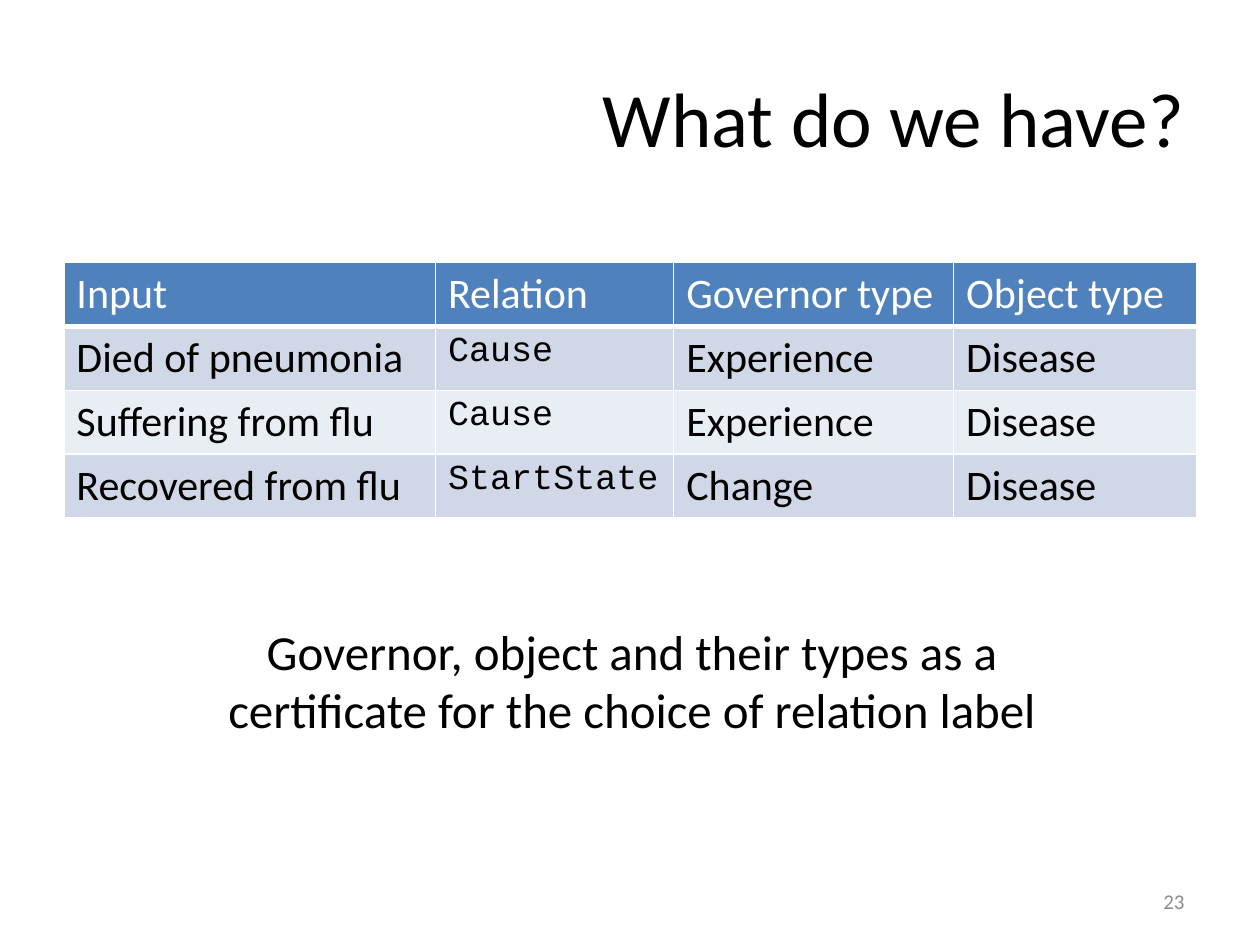
"""Build a slide with a table of relations and the types of their arguments."""
from dataclasses import dataclass

import lxml.etree
import pptx
import pptx.dml.color
import pptx.enum.text
import pptx.oxml.ns
import pptx.util

Pt = pptx.util.Pt
ALIGN = pptx.enum.text.PP_ALIGN
ANCHOR = pptx.enum.text.MSO_ANCHOR


@dataclass(frozen=True)
class Theme:
    body_font: str = "Calibri"
    code_font: str = "Courier New"
    text: str = "000000"
    light: str = "FFFFFF"
    muted: str = "8C8C8C"
    header_fill: str = "4F81BD"
    band_fills: tuple = ("D0D8E8", "E9EDF4")
    title_size: int = 44
    note_size: int = 28
    table_size: int = 24
    code_size: int = 20
    number_size: int = 12


theme = Theme()


def write(frame, text, size, color, align=ALIGN.LEFT, font=theme.body_font):
    paragraph = frame.paragraphs[0]
    paragraph.alignment = align
    run = paragraph.add_run()
    run.text = text
    run.font.name = font
    run.font.size = Pt(size)
    run.font.bold = False
    run.font.color.rgb = pptx.dml.color.RGBColor.from_string(color)


def add_border(cell, side, width):
    qn = pptx.oxml.ns.qn
    properties = cell._tc.get_or_add_tcPr()
    line = lxml.etree.SubElement(properties, qn(f"a:{side}"), w=str(Pt(width)))
    fill = lxml.etree.SubElement(line, qn("a:solidFill"))
    lxml.etree.SubElement(fill, qn("a:srgbClr"), val=theme.light)


presentation = pptx.Presentation()
presentation.slide_width = Pt(720)
presentation.slide_height = Pt(540)
slide = presentation.slides.add_slide(presentation.slide_layouts[5])

title = slide.shapes.title
title.left, title.top, title.width, title.height = Pt(36), Pt(21.6), Pt(648), Pt(90)
title.text_frame.vertical_anchor = ANCHOR.MIDDLE
write(title.text_frame, "What do we have?", theme.title_size, theme.text, ALIGN.RIGHT)

rows = [
    ("Input", "Relation", "Governor type", "Object type"),
    ("Died of pneumonia", "Cause", "Experience", "Disease"),
    ("Suffering from flu", "Cause", "Experience", "Disease"),
    ("Recovered from flu", "StartState", "Change", "Disease"),
]
column_widths = [212.4, 136.1, 159.9, 138.9]
row_height = 36.3
code_column = 1

table = slide.shapes.add_table(
    len(rows), len(column_widths), Pt(36.5), Pt(150),
    Pt(sum(column_widths)), Pt(row_height * len(rows)),
).table
for column, width in zip(table.columns, column_widths):
    column.width = Pt(width)

for row_index, row in enumerate(rows):
    table.rows[row_index].height = Pt(row_height)
    is_header = row_index == 0
    row_fill = theme.header_fill if is_header else theme.band_fills[(row_index - 1) % 2]
    color = theme.light if is_header else theme.text
    borders = {
        "lnL": 1,
        "lnR": 1,
        "lnT": 3 if row_index == 1 else 1,
        "lnB": 3 if is_header else 1,
    }
    for column_index, text in enumerate(row):
        cell = table.cell(row_index, column_index)
        is_code = column_index == code_column and not is_header
        size = theme.code_size if is_code else theme.table_size
        font = theme.code_font if is_code else theme.body_font
        write(cell.text_frame, text, size, color, font=font)
        for side, width in borders.items():
            add_border(cell, side, width)
        cell.fill.solid()
        cell.fill.fore_color.rgb = pptx.dml.color.RGBColor.from_string(row_fill)

number_box = slide.shapes.add_textbox(Pt(516), Pt(500.5), Pt(168), Pt(28.8))
number_box.text_frame.word_wrap = True
number_box.text_frame.vertical_anchor = ANCHOR.MIDDLE
write(number_box.text_frame, "23", theme.number_size, theme.muted, ALIGN.RIGHT)

note_box = slide.shapes.add_textbox(Pt(104.4), Pt(351.4), Pt(513.4), Pt(74.9))
note_box.text_frame.word_wrap = True
note_box.text_frame.auto_size = pptx.enum.text.MSO_AUTO_SIZE.SHAPE_TO_FIT_TEXT
note = "Governor, object and their types as a certificate for the choice of relation label"
write(note_box.text_frame, note, theme.note_size, theme.text, ALIGN.CENTER)

presentation.save("out.pptx")
